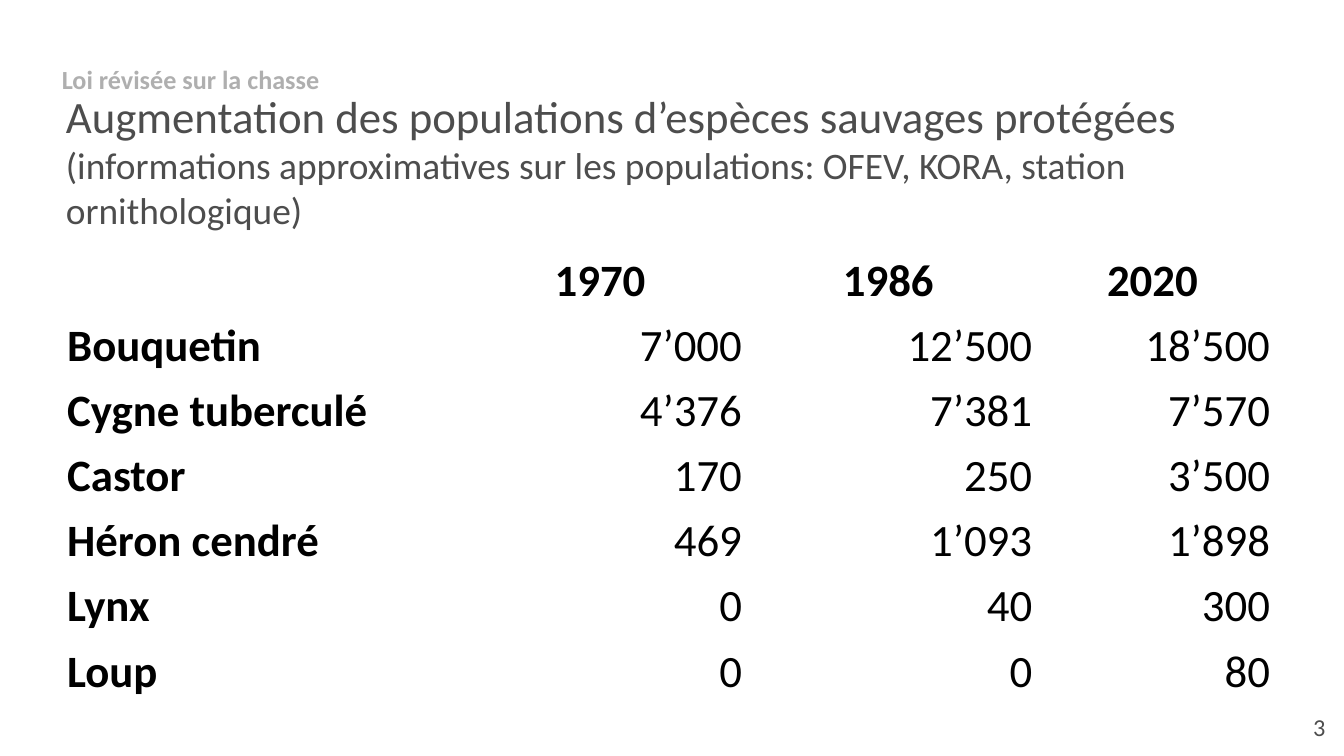
from dataclasses import dataclass
from pptx import Presentation
from pptx.dml.color import RGBColor
from pptx.enum.text import MSO_ANCHOR, MSO_AUTO_SIZE, PP_ALIGN
from pptx.util import Emu, Pt

SCALE = 4572


@dataclass(frozen=True)
class Theme:
    font: str = "Calibri"
    ink: str = "000000"
    grey: str = "4D4D4D"
    pale: str = "AFAFAF"
    large: int = 24
    mid: int = 20
    small: int = 14
    tiny: int = 13


@dataclass(frozen=True)
class Box:
    left: int
    top: int
    width: int
    height: int


@dataclass(frozen=True)
class Piece:
    text: str
    size: int
    color: str
    bold: bool = False


@dataclass(frozen=True)
class Species:
    name: str
    counts: tuple[str, ...]


THEME = Theme()
YEARS = ("1970", "1986", "2020")
WIDTHS = (582, 426, 432, 354)
ROW = 97
HERD = (
    Species("Bouquetin", ("7’000", "12’500", "18’500")),
    Species("Cygne tuberculé", ("4’376", "7’381", "7’570")),
    Species("Castor", ("170", "250", "3’500")),
    Species("Héron cendré", ("469", "1’093", "1’898")),
    Species("Lynx", ("0", "40", "300")),
    Species("Loup", ("0", "0", "80")),
)


def px(count: int) -> Emu:
    return Emu(count * SCALE)


def place(shape, box: Box) -> None:
    shape.left, shape.top = px(box.left), px(box.top)
    shape.width, shape.height = px(box.width), px(box.height)


def pad(item, left: int, top: int, right: int, base: int) -> None:
    item.margin_left, item.margin_top = px(left), px(top)
    item.margin_right, item.margin_bottom = px(right), px(base)


def write(frame, pieces: tuple[Piece, ...], align: PP_ALIGN = PP_ALIGN.LEFT):
    para = frame.paragraphs[0]
    para.alignment = align
    for piece in pieces:
        run = para.add_run()
        run.text = piece.text
        run.font.name = THEME.font
        run.font.size = Pt(piece.size)
        run.font.bold = piece.bold
        run.font.color.rgb = RGBColor.from_string(piece.color)
    return para


def setup(frame, anchor: MSO_ANCHOR) -> None:
    frame.word_wrap = True
    frame.auto_size = MSO_AUTO_SIZE.NONE
    frame.vertical_anchor = anchor


def label(slide, box: Box, piece: Piece, align: PP_ALIGN, anchor: MSO_ANCHOR,
          inset: tuple[int, int, int, int]):
    shape = slide.shapes.add_textbox(0, 0, 0, 0)
    place(shape, box)
    setup(shape.text_frame, anchor)
    pad(shape.text_frame, *inset)
    return write(shape.text_frame, (piece,), align)


def head(slide) -> None:
    title = slide.shapes.title
    place(title, Box(98, 132, 1870, 250))
    setup(title.text_frame, MSO_ANCHOR.TOP)
    pad(title.text_frame, 0, 0, 0, 0)
    write(title.text_frame, (
        Piece("Augmentation des populations d’espèces sauvages protégées ",
              THEME.large, THEME.grey),
        Piece("(informations approximatives sur les populations: "
              "OFEV, KORA, station ornithologique)", THEME.mid, THEME.grey),
    ))


def fill(cell, text: str, bold: bool, align: PP_ALIGN) -> None:
    pad(cell, 2, 2, 2, 0)
    cell.vertical_anchor = MSO_ANCHOR.BOTTOM
    write(cell.text_frame, (Piece(text, THEME.large, THEME.ink, bold),), align)


def grid(slide) -> None:
    rows = len(HERD) + 1
    table = slide.shapes.add_table(rows, len(WIDTHS), px(98), px(362),
                                   px(sum(WIDTHS)), px(ROW * rows)).table
    table.first_row = table.horz_banding = False
    for column, width in zip(table.columns, WIDTHS):
        column.width = px(width)
    for row in table.rows:
        row.height = px(ROW)
    for cell in table.iter_cells():
        cell.fill.background()
    for col, year in enumerate(YEARS, 1):
        fill(table.cell(0, col), year, True, PP_ALIGN.CENTER)
    for row, kind in enumerate(HERD, 1):
        fill(table.cell(row, 0), kind.name, True, PP_ALIGN.LEFT)
        for col, count in enumerate(kind.counts, 1):
            fill(table.cell(row, col), count, False, PP_ALIGN.RIGHT)


def main() -> None:
    deck = Presentation()
    deck.slide_width, deck.slide_height = px(2000), px(1125)
    slide = deck.slides.add_slide(deck.slide_layouts[5])
    label(slide, Box(1872, 1038, 120, 86), Piece("3", THEME.tiny, THEME.grey),
          PP_ALIGN.RIGHT, MSO_ANCHOR.MIDDLE, (20, 20, 20, 20))
    grid(slide)
    topic = label(slide, Box(42, 66, 1830, 62),
                  Piece("Loi révisée sur la chasse", THEME.small, THEME.pale, True),
                  PP_ALIGN.LEFT, MSO_ANCHOR.TOP, (50, 0, 0, 0))
    topic.line_spacing = 1.61
    head(slide)
    deck.save("out.pptx")


if __name__ == "__main__":
    main()
